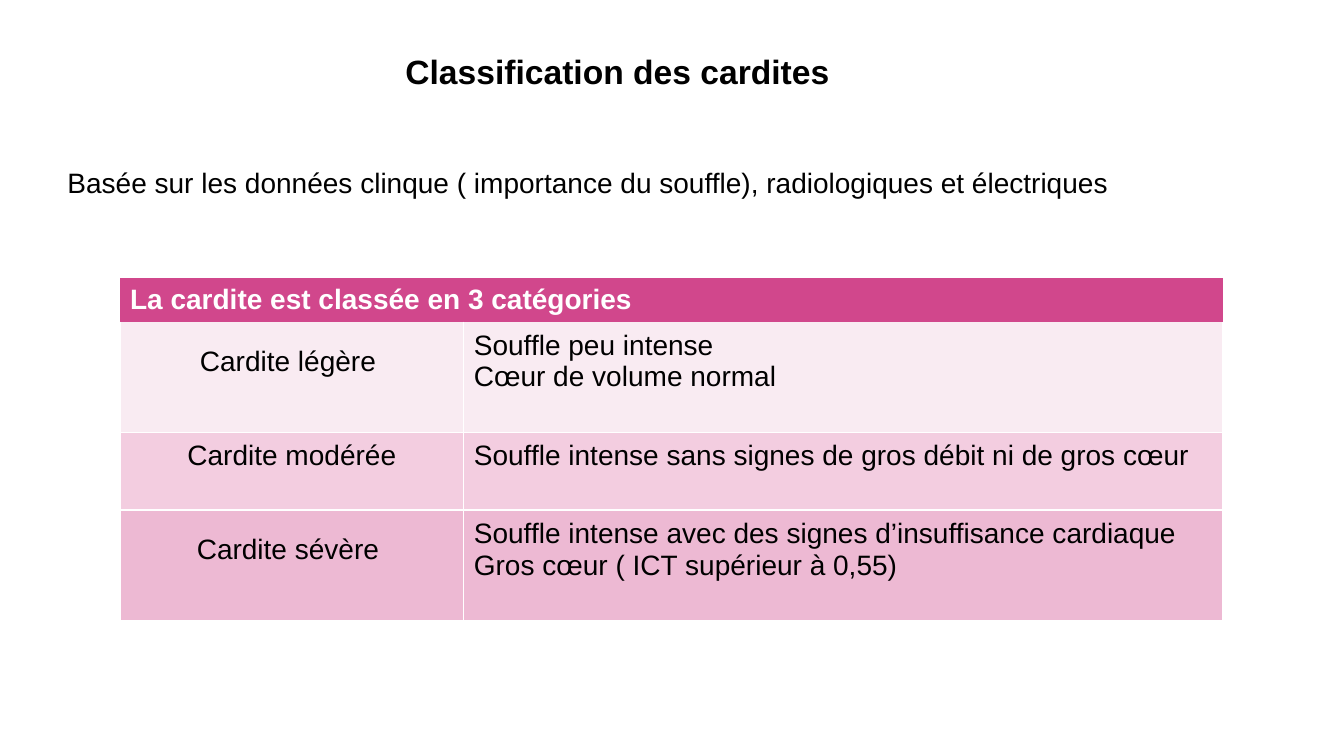
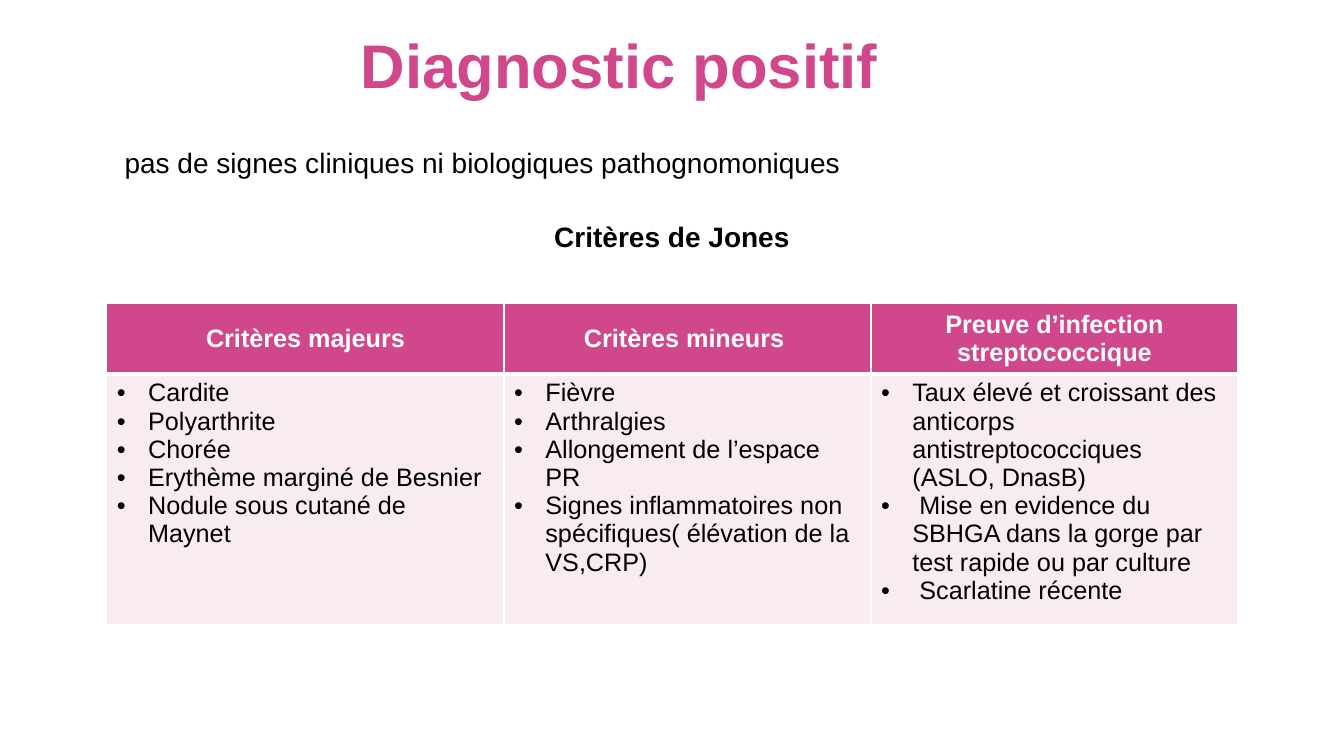
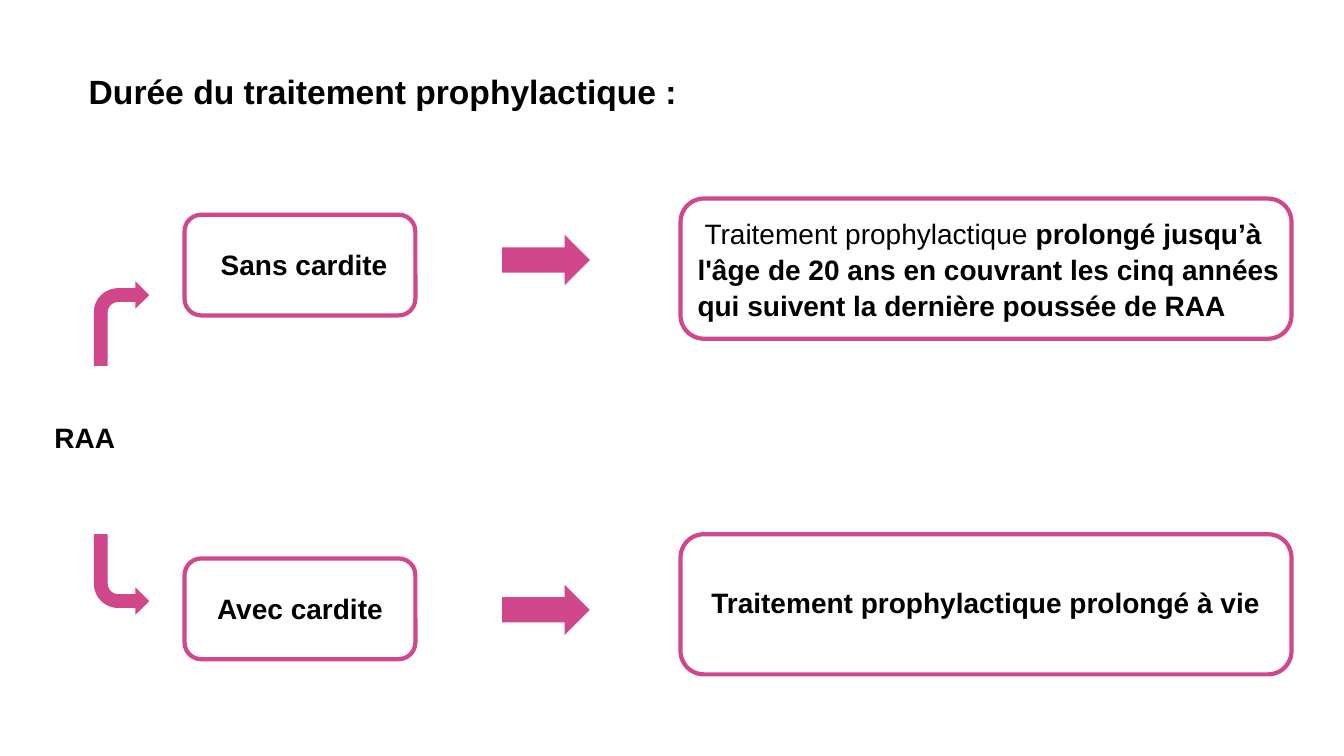
from lxml import etree
from pptx import Presentation
from pptx.dml.color import RGBColor
from pptx.enum.shapes import MSO_SHAPE
from pptx.enum.text import MSO_ANCHOR, MSO_AUTO_SIZE, PP_ALIGN
from pptx.oxml.ns import qn
from pptx.util import Inches, Pt

LEFT, CENTER = PP_ALIGN.LEFT, PP_ALIGN.CENTER
TOP, MIDDLE = MSO_ANCHOR.TOP, MSO_ANCHOR.MIDDLE
NO_AUTOFIT = MSO_AUTO_SIZE.NONE
ROUNDED = MSO_SHAPE.ROUNDED_RECTANGLE
RIGHT_ARROW, BENT_ARROW = MSO_SHAPE.RIGHT_ARROW, MSO_SHAPE.BENT_ARROW
TITLE_ONLY = 5

COLORS = {
    "pink": "D1478C",
    "pale": "F9EBF2",
    "light": "F3CDE0",
    "medium": "EDB9D3",
    "black": "000000",
    "white": "FFFFFF",
}


def rgb(name):
    return RGBColor.from_string(COLORS[name])


class Deck:
    font = "Arial"
    line_spacing = 1.07
    bullet_indent = Inches(0.31)

    def __init__(self):
        self.presentation = Presentation()
        self.presentation.slide_width = Inches(13.33)
        self.presentation.slide_height = Inches(7.5)
        self.slide = None

    def add_slide(self, title, box, size=24, color="black", align=LEFT):
        layout = self.presentation.slide_layouts[TITLE_ONLY]
        self.slide = self.presentation.slides.add_slide(layout)
        shape = self.slide.shapes.title
        shape.left, shape.top, shape.width, shape.height = map(Inches, box)
        self.fill_frame(shape.text_frame, [(title, size, True)], color, align)

    def add_run(self, paragraph, text, size, bold, color):
        run = paragraph.add_run()
        run.text = text
        run.font.name = self.font
        run.font.size = Pt(size)
        run.font.bold = bold
        run.font.color.rgb = rgb(color)

    def fill_frame(self, frame, runs, color, align):
        frame.word_wrap = True
        frame.auto_size = NO_AUTOFIT
        frame.vertical_anchor = TOP
        paragraph = frame.paragraphs[0]
        paragraph.alignment = align
        paragraph.line_spacing = self.line_spacing
        for text, size, bold in runs:
            self.add_run(paragraph, text, size, bold, color)

    def text(self, box, *runs, align=LEFT):
        shape = self.slide.shapes.add_textbox(*map(Inches, box))
        self.fill_frame(shape.text_frame, runs, "black", align)

    def shape(self, kind, box):
        shape = self.slide.shapes.add_shape(kind, *map(Inches, box))
        shape.shadow.inherit = False
        return shape

    def frame(self, box):
        shape = self.shape(ROUNDED, box)
        shape.fill.background()
        shape.line.color.rgb = rgb("pink")
        shape.line.width = Pt(3)

    def arrow(self, kind, box, mirrored=False):
        shape = self.shape(kind, box)
        shape.fill.solid()
        shape.fill.fore_color.rgb = rgb("pink")
        shape.line.fill.background()
        if kind == BENT_ARROW:
            shape.adjustments[3] = 0.44
        if mirrored:
            shape.rotation = 180
            shape.element.spPr.get_or_add_xfrm().set("flipH", "1")

    def table(self, left, top, widths, heights):
        graphic = self.slide.shapes.add_table(
            len(heights), len(widths), Inches(left), Inches(top),
            Inches(sum(widths)), Inches(sum(heights)))
        table = graphic.table
        table.first_row = False
        table.horz_banding = False
        for column, width in zip(table.columns, widths):
            column.width = Inches(width)
        for row, height in zip(table.rows, heights):
            row.height = Inches(height)
        return table

    def borders(self, cell, widths):
        properties = cell._tc.get_or_add_tcPr()
        for side, width in zip("LRTB", widths):
            line = etree.SubElement(properties, qn(f"a:ln{side}"))
            if not width:
                etree.SubElement(line, qn("a:noFill"))
                continue
            line.set("w", str(Pt(width)))
            fill = etree.SubElement(line, qn("a:solidFill"))
            etree.SubElement(fill, qn("a:srgbClr")).set("val", COLORS["white"])

    def bullet(self, paragraph):
        properties = paragraph._p.get_or_add_pPr()
        properties.set("marL", str(self.bullet_indent))
        properties.set("indent", str(-self.bullet_indent))
        etree.SubElement(properties, qn("a:buFont")).set("typeface", self.font)
        etree.SubElement(properties, qn("a:buChar")).set("char", "•")

    def cell(self, cell, lines, fill, size, header=False, align=LEFT,
             anchor=MIDDLE, bottom=0.05, borders=(1, 1, 1, 1), bulleted=False):
        self.borders(cell, borders)
        cell.fill.solid()
        cell.fill.fore_color.rgb = rgb(fill)
        cell.vertical_anchor = anchor
        cell.margin_bottom = Inches(bottom)
        frame = cell.text_frame
        for index, line in enumerate(lines):
            paragraph = frame.add_paragraph() if index else frame.paragraphs[0]
            paragraph.alignment = align
            if bulleted:
                self.bullet(paragraph)
            self.add_run(paragraph, line, size, header,
                         "white" if header else "black")

    def save(self):
        self.presentation.save("out.pptx")


def classification(deck):
    deck.add_slide("Classification des cardites ", (0.57, 0.43, 11.2, 0.5),
                   align=CENTER)
    deck.text((0.57, 1.57, 11.2, 0.44),
              ("Basée sur les données clinque ( importance du souffle), "
               "radiologiques et électriques", 20, False))
    categories = [
        ("Cardite légère ", ["Souffle peu intense", "Cœur de volume normal"],
         "pale"),
        ("Cardite modérée",
         ["Souffle intense sans signes de gros débit ni de gros cœur"],
         "light"),
        ("Cardite sévère ",
         ["Souffle intense avec des signes d’insuffisance cardiaque",
          "Gros cœur ( ICT supérieur à 0,55)"], "medium"),
    ]
    table = deck.table(1.19, 2.76, [3.41, 7.53], [0.43, 1.1, 0.77, 1.1])
    table.cell(0, 0).merge(table.cell(0, 1))
    deck.cell(table.cell(0, 0), ["La cardite est classée en 3 catégories"],
              "pink", 20, header=True, borders=(0, 0, 0, 0))
    for row, (name, signs, fill) in enumerate(categories, 1):
        borders = (1, 1, 0 if row == 1 else 1, 1)
        for column, lines, align in ((0, [name], CENTER), (1, signs, LEFT)):
            deck.cell(table.cell(row, column), lines, fill, 20, align=align,
                      bottom=0.36, borders=borders)


def diagnosis(deck):
    deck.add_slide("Diagnostic positif", (3.48, 0.17, 5.55, 0.84),
                   size=44, color="pink")
    deck.text((1.06, 1.37, 7.44, 0.74),
              (" pas de signes cliniques ni biologiques pathognomoniques",
               20, False))
    deck.text((0, 2.11, 13.33, 0.44), ("Critères de Jones", 20, True),
              align=CENTER)
    criteria = [
        ("Critères majeurs",
         ["Cardite", "Polyarthrite", "Chorée", "Erythème marginé de Besnier",
          "Nodule sous cutané de Maynet"]),
        ("Critères mineurs ",
         ["Fièvre", "Arthralgies", "Allongement de l’espace PR",
          "Signes inflammatoires non spécifiques( élévation de la VS,CRP)"]),
        ("Preuve d’infection streptococcique",
         ["Taux élevé et croissant des anticorps antistreptococciques "
          "(ASLO, DnasB)",
          " Mise en evidence du SBHGA dans la gorge par test rapide ou par "
          "culture",
          " Scarlatine récente"]),
    ]
    table = deck.table(1.06, 3.01, [3.94, 3.64, 3.64], [0.7, 2.49])
    for column, (heading, items) in enumerate(criteria):
        deck.cell(table.cell(0, column), [heading], "pink", 18, header=True,
                  align=CENTER, borders=(1, 1, 1, 3))
        deck.cell(table.cell(1, column), items, "pale", 18, anchor=TOP,
                  borders=(1, 1, 3, 1), bulleted=True)


def treatment(deck):
    deck.add_slide("Durée du traitement prophylactique :",
                   (0.78, 0.63, 6.06, 0.5))
    for case_top, duration_top, arrow_top in ((2.13, 1.97, 2.33),
                                              (5.54, 5.3, 5.8)):
        deck.frame((1.83, case_top, 2.29, 1))
        deck.frame((6.75, duration_top, 6.06, 1.39))
        deck.arrow(RIGHT_ARROW, (4.98, arrow_top, 0.87, 0.5))
    deck.arrow(BENT_ARROW, (0.93, 2.79, 0.55, 0.84))
    deck.arrow(BENT_ARROW, (0.93, 5.3, 0.55, 0.8), mirrored=True)
    deck.text((0.44, 4.1, 0.81, 0.44), ("RAA", 20, True))
    deck.text((2.09, 2.38, 1.95, 0.44), ("Sans cardite", 20, True))
    deck.text((1.83, 5.8, 2.29, 0.44), ("Avec cardite", 20, True),
              align=CENTER)
    deck.text((6.82, 2.08, 6.06, 1.11),
              (" ", 18, False),
              ("Traitement prophylactique ", 20, False),
              ("prolongé jusqu’à l'âge de 20 ans en couvrant les cinq années "
               "qui suivent la dernière poussée de RAA", 20, True))
    deck.text((6.82, 5.74, 5.99, 0.44),
              ("Traitement prophylactique prolongé à vie ", 20, True),
              align=CENTER)


def main():
    deck = Deck()
    classification(deck)
    diagnosis(deck)
    treatment(deck)
    deck.save()


if __name__ == "__main__":
    main()
